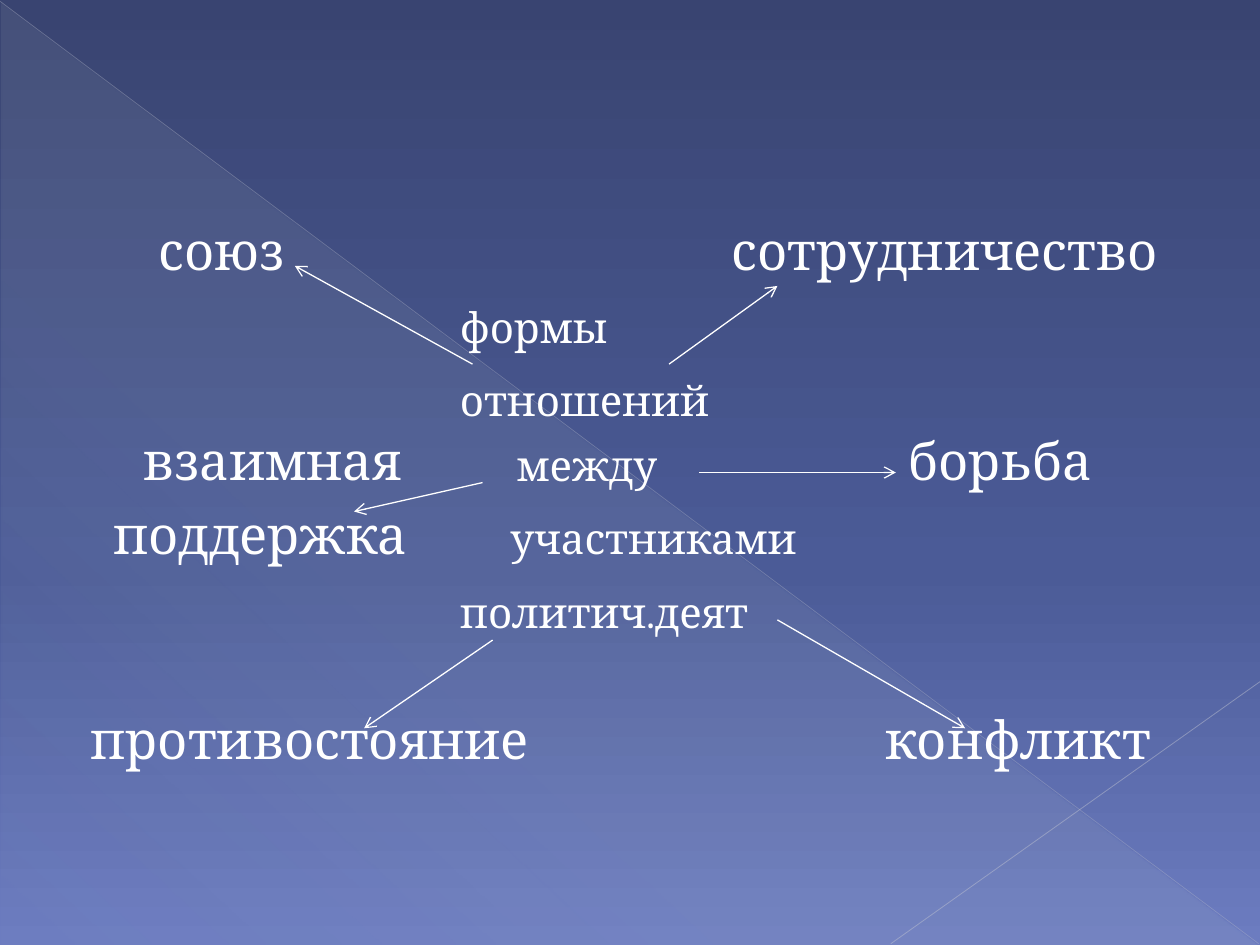
from pptx import Presentation
from pptx.dml.color import RGBColor
from pptx.enum.shapes import MSO_CONNECTOR as CONN, MSO_SHAPE as SHAPE
from pptx.enum.text import MSO_ANCHOR, MSO_AUTO_SIZE
from pptx.oxml.ns import qn
from pptx.util import Inches, Pt
from lxml.etree import SubElement

# Content: lines are (text, indent in inches, space before in points)
TOPIC = [
    ("формы", 0, 0),
    ("отношений", 0, 6),
    ("между", 0.45, 1),
    ("участниками", 0.4, 6),
    ("политич.деят", 0, 6),
]
# Left, top, width, lines
FORMS = [
    (1.26, 1.73, 1.3, [("союз", 0, 0)]),
    (5.81, 1.73, 3.8, [("сотрудничество", 0, 0)]),
    (0.9, 3.4, 2.7, [("взаимная", 0.24, 0), ("поддержка", 0, 6)]),
    (7.21, 3.4, 1.8, [("борьба", 0, 0)]),
    (0.72, 5.61, 3.8, [("противостояние", 0, 0)]),
    (7.03, 5.61, 2.5, [("конфликт", 0, 0)]),
]
ARROWS = [
    ((5.31, 2.89), (6.17, 2.27)),
    ((5.55, 3.75), (7.11, 3.75)),
    ((6.17, 4.92), (7.66, 5.78)),
    ((3.75, 2.89), (2.34, 2.11)),
    ((3.83, 3.83), (2.81, 4.06)),
    ((3.91, 5.08), (2.89, 5.78)),
]
# Start, end, colour, width, opacity
DIAGONALS = [
    ((0, 0.01), (9.99, 7.49), "BABECD", 0.39, 35),
    ((10, 5.41), (7.07, 7.49), "C2C5D2", 0.47, 45),
]
# Position, colour, opacity
SKY = [(0, "394471", 100), (60, "4B5B97", 100), (100, "6C7CC0", 100)]
GLASS = [(0, "C5D1D7", 10), (70, "C5D1D7", 8), (100, "C5D1D7", 1)]
LINE_PITCH = 36


def rgb(code):
    return RGBColor.from_string(code)


def add_alpha(color, percent):
    SubElement(color, qn("a:alpha"), val=str(percent * 1000))


def set_gradient(fill, element, stops, angle):
    fill.gradient()
    fill.gradient_angle = 360 - angle
    gs_list = next(element.iter(qn("a:gsLst")))
    for old in list(gs_list):
        gs_list.remove(old)
    for pos, code, opacity in stops:
        gs = SubElement(gs_list, qn("a:gs"), pos=str(pos * 1000))
        color = SubElement(gs, qn("a:srgbClr"), val=code)
        if opacity < 100:
            add_alpha(color, opacity)


def add_line(s, start, end, code, width, opacity=100, arrow=False):
    line = s.shapes.add_connector(CONN.STRAIGHT, *map(Inches, start + end))
    line.line.color.rgb = rgb(code)
    line.line.width = Pt(width)
    sp_pr = line._element.spPr
    if opacity < 100:
        add_alpha(next(sp_pr.iter(qn("a:srgbClr"))), opacity)
    if arrow:
        SubElement(sp_pr.find(qn("a:ln")), qn("a:tailEnd"), type="arrow")
    SubElement(sp_pr, qn("a:effectLst"))


def write_lines(tf, lines, size):
    tf.auto_size, tf.word_wrap = MSO_AUTO_SIZE.NONE, True
    tf.vertical_anchor = MSO_ANCHOR.TOP
    tf.margin_left = tf.margin_right = tf.margin_top = tf.margin_bottom = 0
    for i, (text, indent, space) in enumerate(lines):
        p = tf.add_paragraph() if i else tf.paragraphs[0]
        p.text = text
        p.space_before, p.line_spacing = Pt(space), Pt(LINE_PITCH)
        p_pr = p._p.get_or_add_pPr()
        p_pr.set("marL", str(Inches(indent)))
        p_pr.set("indent", "0")
        SubElement(p_pr, qn("a:buNone"))
        font = p.runs[0].font
        font.name, font.size = "Cambria", Pt(size)
        font.color.rgb = rgb("FFFFFF")


def main():
    prs = Presentation()
    prs.slide_width, prs.slide_height = Inches(10), Inches(7.5)
    s = prs.slides.add_slide(prs.slide_layouts[1])
    title, body = s.placeholders
    title._element.getparent().remove(title._element)

    # Background
    set_gradient(s.background.fill, s.element, SKY, 90)
    glass = s.shapes.add_shape(
        SHAPE.RIGHT_TRIANGLE, *map(Inches, (0.01, 0.02, 9.98, 7.48)))
    glass.shadow.inherit = False
    glass.line.fill.background()
    set_gradient(glass.fill, glass._element, GLASS, 133)
    for diagonal in DIAGONALS:
        add_line(s, *diagonal)

    # Central topic, in front of the background shapes
    s.shapes.element.append(body._element)
    body.left, body.top = Inches(3.65), Inches(2.29)
    body.width, body.height = Inches(3), Inches(2.8)
    write_lines(body.text_frame, TOPIC, 24)

    # Forms of relations around it
    for left, top, width, lines in FORMS:
        height = 0.55 * len(lines)
        box = s.shapes.add_textbox(*map(Inches, (left, top, width, height)))
        write_lines(box.text_frame, lines, 30)

    # Arrows
    for start, end in ARROWS:
        add_line(s, start, end, "FFFFFF", 0.75, arrow=True)

    prs.save("out.pptx")


if __name__ == "__main__":
    main()
